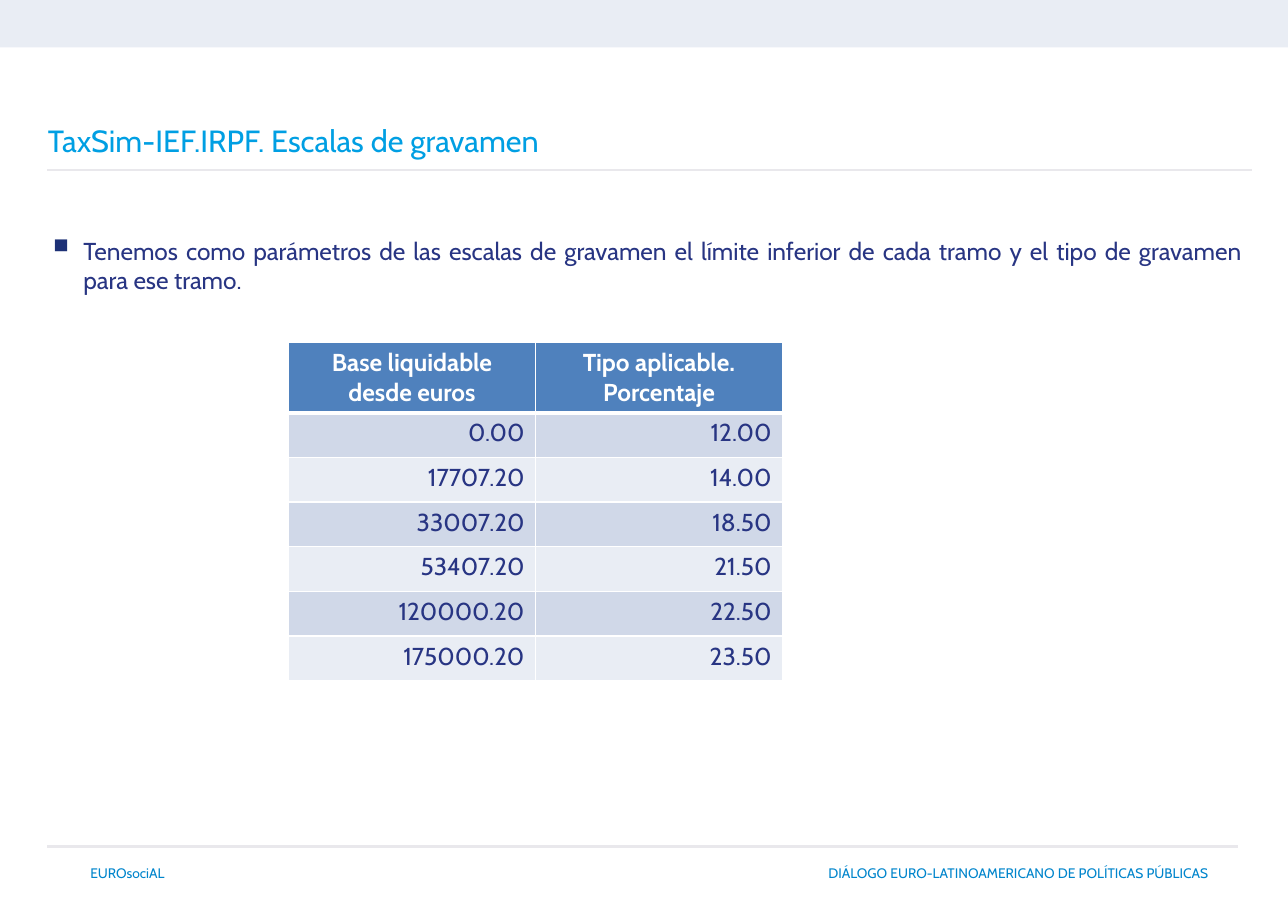
from lxml import etree
from pptx import Presentation
from pptx.enum import shapes, text
from pptx.oxml import ns
from pptx.util import Pt

# Content
TITLE = "TaxSim-IEF.IRPF. Escalas de gravamen"
POINT = ("Tenemos como parámetros de las escalas de gravamen el límite inferior "
         "de cada tramo y el tipo de gravamen para ese tramo.")
ROWS = [
    ("Base liquidable desde euros", "Tipo aplicable. Porcentaje"),
    ("0.00", "12.00"),
    ("17707.20", "14.00"),
    ("33007.20", "18.50"),
    ("53407.20", "21.50"),
    ("120000.20", "22.50"),
    ("175000.20", "23.50"),
]
FEET = [
    ("EUROsociAL", "RIGHT", 23.8, 90.7),
    ("DIÁLOGO EURO-LATINOAMERICANO DE POLÍTICAS PÚBLICAS", "LEFT", 534.2, 289.4),
]
RULES = [(111, 818, 1), (553, 809.3, 2)]  # y, right end, weight
LEFT = 31
FONT = "Cabin"
HUES = {"cyan": "009FE3", "foot": "0085CC", "navy": "283583", "mark": "1D3176",
        "rule": "E9E8EC", "head": "4F81BD", "dark": "D0D8E8", "pale": "E9EDF4",
        "white": "FFFFFF"}


def paint(fill, hue):
    fill.solid()
    fill.fore_color.rgb = rgb(hue)


def rgb(hue):
    return RGB.from_string(HUES[hue])


def add(parent, tag, **attrs):
    node = etree.SubElement(parent, ns.qn(tag))
    for key, val in attrs.items():
        node.set(key, str(val))
    return node


def write(frame, words, size=16, hue="navy", align="LEFT", bold=False, mark=None):
    frame.word_wrap = True
    para = frame.paragraphs[0]
    para.text = words
    para.alignment = getattr(text.PP_ALIGN, align)
    if mark:
        props = para._p.get_or_add_pPr()
        props.set("marL", str(Pt(23.5)))
        props.set("indent", str(Pt(-27)))
        add(add(props, "a:buClr"), "a:srgbClr", val=HUES["mark"])
        add(props, "a:buSzPct", val=150000)
        add(props, "a:buChar", char=mark)
    font = para.runs[0].font
    font.name, font.size, font.bold = FONT, Pt(size), bold
    font.color.rgb = rgb(hue)


def edge(cell, **widths):
    props = cell._tc.get_or_add_tcPr()
    for spot, (side, width) in enumerate(widths.items()):
        line = etree.Element(ns.qn("a:" + side), w=str(Pt(width)))
        add(add(line, "a:solidFill"), "a:srgbClr", val=HUES["white"])
        props.insert(spot, line)


def box(left, top, width, height):
    return slide.shapes.add_textbox(*map(Pt, (left, top, width, height))).text_frame


from pptx.dml.color import RGBColor as RGB

deck = Presentation()
deck.slide_width, deck.slide_height = Pt(841.7), Pt(595.4)
slide = deck.slides.add_slide(deck.slide_layouts[5])

# Top band
band = slide.shapes.add_shape(shapes.MSO_SHAPE.RECTANGLE, 0, Pt(-2),
                              deck.slide_width, Pt(33))
band.shadow.inherit = False
paint(band.fill, "pale")
band.line.fill.background()

# Title
title = slide.shapes.title
title.left, title.top, title.width, title.height = map(Pt, (24, 76.3, 757.4, 36))
write(title.text_frame, TITLE, size=20, hue="cyan")
title.text_frame.vertical_anchor = text.MSO_ANCHOR.TOP

# Rules under the title and above the footer
for y, end, weight in RULES:
    rule = slide.shapes.add_connector(shapes.MSO_CONNECTOR.STRAIGHT,
                                      Pt(LEFT), Pt(y), Pt(end), Pt(y))
    rule.line.color.rgb = rgb("rule")
    rule.line.width = Pt(weight)
    add(rule._element.spPr, "a:effectLst")

# Bullet
body = box(LEFT, 154, 781, 47)
body.margin_left = body.margin_top = body.margin_right = body.margin_bottom = 0
write(body, POINT, align="JUSTIFY", mark="▪")

# Table of tax brackets
wide, head, tall = 161.4, 45.8, 29.2
grid = slide.shapes.add_table(len(ROWS), 2, Pt(188.6), Pt(224), Pt(2 * wide),
                              Pt(head + tall * (len(ROWS) - 1))).table
for col in grid.columns:
    col.width = Pt(wide)
for r, row in enumerate(ROWS):
    grid.rows[r].height = Pt(tall if r else head)
    for c, words in enumerate(row):
        cell = grid.cell(r, c)
        if r:
            write(cell.text_frame, words, align="RIGHT")
        else:
            write(cell.text_frame, words, hue="white", align="CENTER", bold=True)
        paint(cell.fill, ("dark" if r % 2 else "pale") if r else "head")
        edge(cell, lnL=1, lnR=1, lnT=3 if r == 1 else 1, lnB=1 if r else 3)

# Footer
for words, align, left, width in FEET:
    write(box(left, 561.6, width, 18), words, size=9, hue="foot", align=align)

deck.save("out.pptx")
